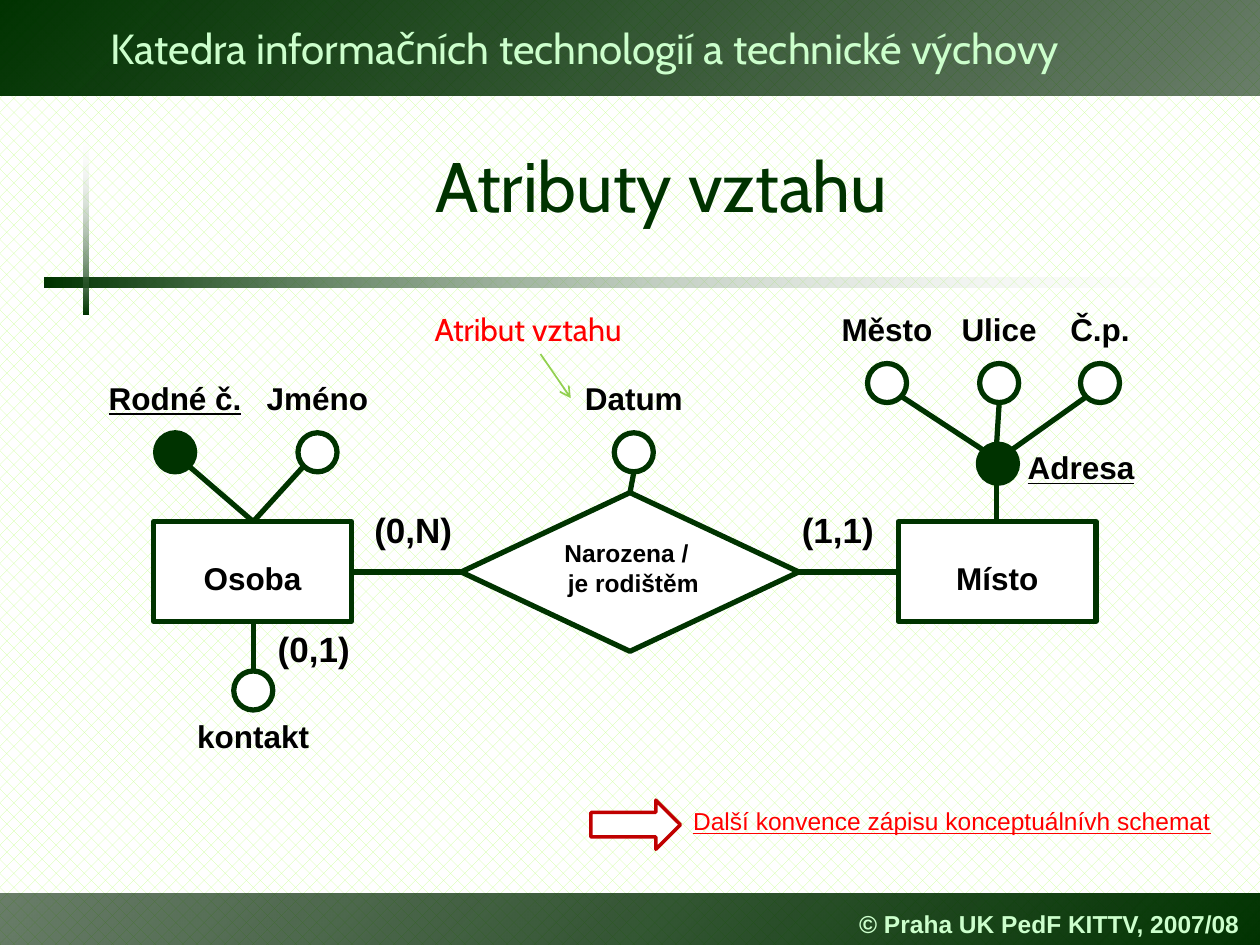
"""Build the slide on attributes of a relationship."""
from lxml import etree
from pptx import Presentation
from pptx.dml.color import RGBColor
from pptx.enum.dml import MSO_PATTERN
from pptx.enum.shapes import MSO_CONNECTOR, MSO_SHAPE
from pptx.enum.text import MSO_ANCHOR, MSO_AUTO_SIZE, PP_ALIGN
from pptx.oxml.ns import qn
from pptx.util import Inches, Pt

RECT, OVAL = MSO_SHAPE.RECTANGLE, MSO_SHAPE.OVAL
DIAMOND, ARROW = MSO_SHAPE.DIAMOND, MSO_SHAPE.RIGHT_ARROW
LINE = MSO_CONNECTOR.STRAIGHT
LEFT, MID = PP_ALIGN.LEFT, PP_ALIGN.CENTER
TOP, CENTER = MSO_ANCHOR.TOP, MSO_ANCHOR.MIDDLE
FIT, DOTS = MSO_AUTO_SIZE.SHAPE_TO_FIT_TEXT, MSO_PATTERN.PERCENT_25

GREEN = RGBColor(0x00, 0x33, 0x00)
DARK = RGBColor(0x00, 0x24, 0x00)
MINT = RGBColor(0xCC, 0xFF, 0xCC)
LIME = RGBColor(0xCC, 0xFF, 0x99)
LEAF = RGBColor(0x92, 0xD0, 0x50)
RED = RGBColor(0xFF, 0x00, 0x00)
BRICK = RGBColor(0xC0, 0x00, 0x00)
WHITE = RGBColor(0xFF, 0xFF, 0xFF)
BLACK = RGBColor(0x00, 0x00, 0x00)


class Sketch:
    """Draw styled elements on one slide."""

    sans, head, dot = "Arial", "Cabin", 0.31

    def __init__(self, slide):
        self.slide = slide
        fill = slide.background.fill
        fill.patterned()
        fill.pattern = DOTS
        fill.fore_color.rgb, fill.back_color.rgb = LIME, WHITE

    def label(self, frame, text, size, color=BLACK, font=sans, bold=True,
              under=False, align=MID):
        para = frame.paragraphs[0]
        para.alignment = align
        for num, part in enumerate(text.split("\n")):
            if num:
                para.add_line_break()
            run = para.add_run()
            run.text = part
            run.font.size, run.font.name = Pt(size), font
            run.font.bold, run.font.underline = bold, under
            run.font.color.rgb = color

    def text(self, x, y, w, h, text, size, wrap=False, anchor=TOP, **look):
        box = self.slide.shapes.add_textbox(*map(Inches, (x, y, w, h)))
        frame = box.text_frame
        frame.word_wrap, frame.vertical_anchor = wrap, anchor
        if not wrap:
            frame.auto_size = FIT
        self.label(frame, text, size, **look)
        return box

    def shape(self, kind, x, y, w, h, fill=WHITE, line=GREEN, width=3):
        item = self.slide.shapes.add_shape(kind, *map(Inches, (x, y, w, h)))
        item.shadow.inherit = False
        item.fill.solid()
        item.fill.fore_color.rgb = fill
        item.line.color.rgb = line
        item.line.width = Pt(width)
        return item

    def block(self, kind, x, y, w, h, text, size, anchor, top=0.05):
        frame = self.shape(kind, x, y, w, h).text_frame
        frame.word_wrap, frame.vertical_anchor = True, anchor
        frame.margin_top = Inches(top)
        self.label(frame, text, size)

    def fade(self, x, y, w, h, stops, angle=0, turn=0):
        bar = self.shape(RECT, x, y, w, h)
        bar.line.fill.background()
        bar.rotation = turn
        bar.fill.gradient()
        bar.fill.gradient_angle = angle
        for stop, (color, _) in zip(bar.fill.gradient_stops, stops):
            stop.color.rgb = color
        grad = bar.element.spPr.find(qn("a:gradFill"))
        for node, (_, alpha) in zip(grad.iter(qn("a:srgbClr")), stops):
            etree.SubElement(node, qn("a:alpha"), val=str(alpha * 1000))

    def line(self, x1, y1, x2, y2, color=GREEN, width=3, tip=False):
        link = self.slide.shapes.add_connector(
            LINE, *map(Inches, (x1, y1, x2, y2)))
        link.line.color.rgb = color
        link.line.width = Pt(width)
        if tip:
            ln = link.element.spPr.find(qn("a:ln"))
            etree.SubElement(ln, qn("a:tailEnd"), type="arrow")
        etree.SubElement(link.element.spPr, qn("a:effectLst"))

    def node(self, x, y, text, w, dx=0, dy=-0.43, key=False):
        d = self.dot
        self.shape(OVAL, x - d / 2, y - d / 2, d, d, GREEN if key else WHITE)
        self.text(x + dx - w / 2, y + dy - 0.2, w, 0.4, text, 18, under=key)

    def shade(self, box):
        for fill in box.element.txBody.iter(qn("a:solidFill")):
            fx = etree.Element(qn("a:effectLst"))
            cast = etree.SubElement(fx, qn("a:outerShdw"),
                                    dist="35921", dir="2700000")
            etree.SubElement(cast, qn("a:srgbClr"), val=str(DARK))
            fill.addnext(fx)


def main():
    deck = Presentation()
    deck.slide_width, deck.slide_height = Inches(10), Inches(7.5)
    art = Sketch(deck.slides.add_slide(deck.slide_layouts[6]))

    band = (DARK, 59), (GREEN, 100)
    rule = (GREEN, 100), (WHITE, 0)
    art.fade(0, 7.09, 10, 0.44, band, 315)
    art.fade(0, 0, 10, 0.76, band, 315, 180)
    art.shade(art.text(
        0.78, 0.13, 8.07, 0.5,
        "Katedra informačních technologií a technické výchovy", 24,
        color=MINT, font=art.head, bold=False, align=LEFT))
    art.text(6.72, 7.17, 3.28, 0.33, "© Praha UK PedF KITTV, 2007/08", 14,
             anchor=CENTER, color=MINT, align=LEFT)
    art.fade(0.35, 2.2, 9.49, 0.08, rule)
    art.fade(-0.03, 1.76, 1.43, 0.04, rule, turn=270)
    art.text(0.75, 0.84, 9, 1.25, "Atributy vztahu", 40, wrap=True,
             anchor=CENTER, color=GREEN, font=art.head, bold=False)

    for x, name in (1.22, "Osoba"), (7.13, "Místo"):
        art.block(RECT, x, 4.14, 1.57, 0.79, name, 18, CENTER, 0.15)
    art.block(DIAMOND, 3.66, 3.91, 2.68, 1.26,
              "Narozena / \n je rodištěm", 14, TOP)

    for ends in (
        (2.8, 4.54, 3.66, 4.54), (6.34, 4.54, 7.13, 4.54),
        (1.5, 3.7, 2.01, 4.14), (2.01, 4.14, 2.41, 3.7),
        (7.91, 3.84, 7.91, 4.14), (7.8, 3.57, 7.16, 3.15),
        (7.91, 3.52, 7.93, 3.2), (8.03, 3.57, 8.62, 3.15),
        (2.01, 4.93, 2.01, 5.32), (5.03, 3.75, 5, 3.91),
    ):
        art.line(*ends)

    art.node(1.39, 3.59, "Rodné č.", 1.27, key=True)
    art.node(7.92, 3.68, "Adresa", 1.06, 0.66, 0.03, key=True)
    art.node(2.01, 5.48, "kontakt", 1.1, dy=0.36)
    for x, y, name, w in (
        (2.52, 3.59, "Jméno", 1.02), (5.03, 3.59, "Datum", 0.99),
        (7.04, 3.04, "Město", 0.93), (7.93, 3.04, "Ulice", 0.81),
        (8.73, 3.04, "Č.p.", 0.68),
    ):
        art.node(x, y, name, w)

    for x, y, w, count in (
        (6.26, 3.99, 0.78, "(1,1)"), (2.87, 3.99, 0.82, "(0,N)"),
        (2.1, 4.93, 0.78, "(0,1)"),
    ):
        art.text(x, y, w, 0.44, count, 20)

    art.text(3.35, 2.41, 1.89, 0.39, "Atribut vztahu", 18, wrap=True,
             color=RED, font=art.head, bold=False, align=LEFT)
    art.line(4.29, 2.81, 4.53, 3.16, LEAF, 1, tip=True)
    art.text(5.39, 6.35, 4.33, 0.34,
             "Další konvence zápisu konceptuálnívh schemat", 14,
             color=RED, bold=False, under=True)
    art.shape(ARROW, 4.69, 6.35, 0.71, 0.39, line=BRICK, width=2)
    deck.save("out.pptx")


if __name__ == "__main__":
    main()
